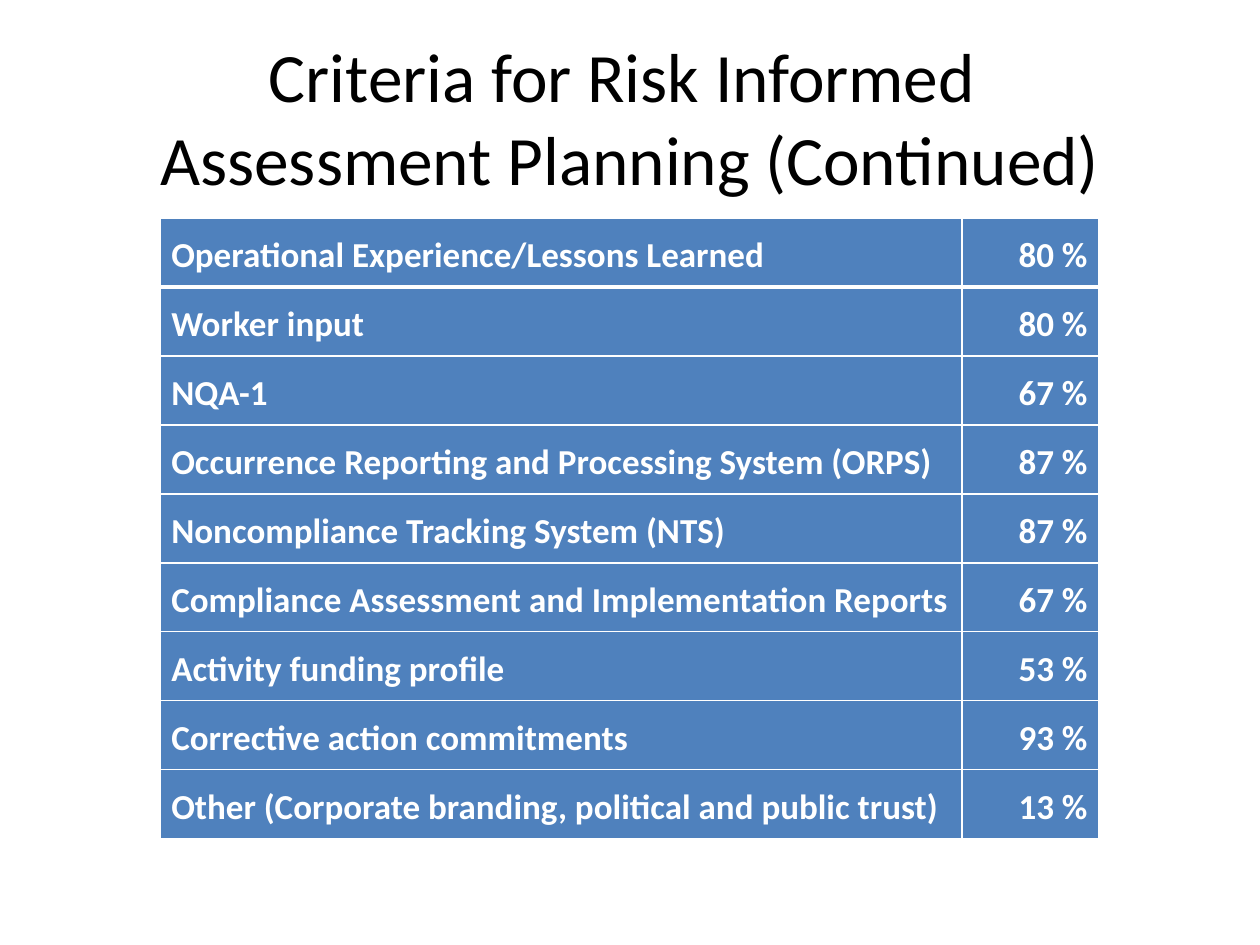
from pptx import Presentation, util as u
from pptx.dml.color import RGBColor
from pptx.enum import text
from pptx.oxml import parse_xml
from pptx.oxml.ns import nsdecls

TITLE = "Criteria for Risk Informed \vAssessment Planning (Continued)"
CRITERIA = [
    ("Operational Experience/Lessons Learned", 80),
    ("Worker input", 80),
    ("NQA-1", 67),
    ("Occurrence Reporting and Processing System (ORPS)", 87),
    ("Noncompliance Tracking System (NTS)", 87),
    ("Compliance Assessment and Implementation Reports", 67),
    ("Activity funding profile", 53),
    ("Corrective action commitments", 93),
    ("Other (Corporate branding, political and public trust)", 13),
]
FONT, BLACK, WHITE, BLUE = "Calibri", "000000", "FFFFFF", "4F81BD"
COLUMNS, ROW_HEIGHT = (802, 137), 69
ALIGNMENTS = (text.PP_ALIGN.LEFT, text.PP_ALIGN.RIGHT)


def px(length):
    return u.Emu(round(length * 914400 / 126))


def color(value):
    return RGBColor.from_string(value)


def style(para, size, hue, align, bold=False):
    para.alignment = align
    for span in para.runs:
        span.font.name, span.font.size, span.font.bold = FONT, u.Pt(size), bold
        span.font.color.rgb = color(hue)


def set_borders(cell, widths):
    """Draw white borders; widths are points for left, right, top, bottom."""
    properties = cell._tc.get_or_add_tcPr()
    for index, (side, width) in enumerate(zip("LRTB", widths)):
        properties.insert(index, parse_xml(
            f'<a:ln{side} {nsdecls("a")} w="{u.Pt(width)}"><a:solidFill>'
            f'<a:srgbClr val="{WHITE}"/></a:solidFill></a:ln{side}>'))


deck = Presentation()
deck.slide_width, deck.slide_height = px(1260), px(945)
page = deck.slides.add_slide(deck.slide_layouts[6])

# Title
box = page.shapes.add_textbox(px(63), px(38), px(1134), px(157))
frame = box.text_frame
frame.word_wrap = True
frame.vertical_anchor = text.MSO_ANCHOR.MIDDLE
frame.text = TITLE
style(frame.paragraphs[0], 39.6, BLACK, text.PP_ALIGN.CENTER)

# Criteria table
table = page.shapes.add_table(len(CRITERIA), len(COLUMNS), px(160), px(218),
                              px(sum(COLUMNS)), px(ROW_HEIGHT * len(CRITERIA))).table
for column, width in zip(table.columns, COLUMNS):
    column.width = px(width)
for row, (criterion, share) in enumerate(CRITERIA):
    table.rows[row].height = px(ROW_HEIGHT)
    for column, content in enumerate((criterion, f"{share} %")):
        cell = table.cell(row, column)
        cell.text = content
        cell.vertical_anchor = text.MSO_ANCHOR.MIDDLE
        cell.margin_left = cell.margin_right = u.Inches(0.09)
        cell.margin_top = cell.margin_bottom = u.Inches(0.04)
        cell.fill.solid()
        cell.fill.fore_color.rgb = color(BLUE)
        # A heavier rule separates the first row from the rest
        set_borders(cell, (1, 1, 3 if row == 1 else 1, 3 if row == 0 else 1))
        para = cell.text_frame.paragraphs[0]
        para.line_spacing = 1.15
        style(para, 20, WHITE, ALIGNMENTS[column], bold=True)

deck.save("out.pptx")
